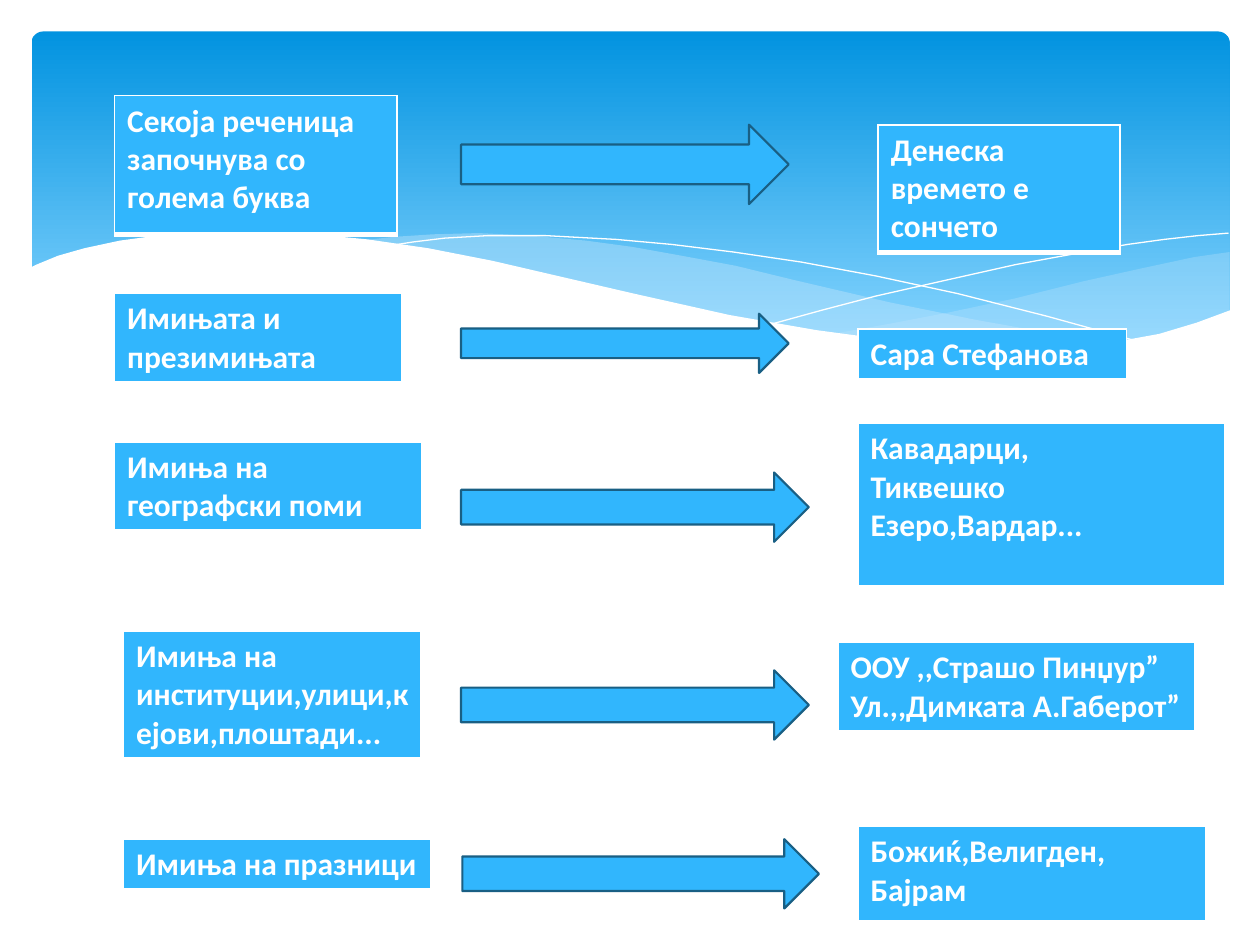
from pptx import Presentation
from pptx.dml.color import RGBColor as RGB
from pptx.enum.shapes import MSO_SHAPE as Kind
from pptx.oxml import parse_xml
from pptx.oxml.ns import nsdecls
from pptx.util import Inches, Pt

HEX = {"box": "31B6FD", "edge": "195F84", "top": "0293E0", "low": "83D3FE",
       "mist": "C6E7FC", "white": "FFFFFF"}

# Each wave: points, fill, opacity in percent
WAVES = [
    ([(9.76, 2), (9.48, 2.04), (9.06, 2.13), (8.61, 2.23), (8.05, 2.37),
      (7.53, 2.48), (7.06, 2.57), (6.61, 2.65), (6.91, 2.69), (7.32, 2.74),
      (7.69, 2.77), (8.14, 2.78), (8.54, 2.76), (8.89, 2.72), (9.21, 2.65),
      (9.49, 2.57), (9.76, 2.47)], "mist", 29),
    ([(8.93, 2.73), (8.37, 2.65), (7.75, 2.54), (7.06, 2.4), (6.29, 2.22),
      (5.84, 2.11), (5.41, 2.03), (5.02, 1.96), (4.65, 1.91), (4.2, 1.87),
      (3.8, 1.85), (3.44, 1.86), (3.13, 1.88), (2.86, 1.91), (3.23, 1.96),
      (3.62, 2.03), (4.04, 2.11), (4.49, 2.22), (5.3, 2.4), (5.84, 2.52),
      (6.34, 2.61), (6.8, 2.68), (7.22, 2.74), (7.61, 2.77), (8.07, 2.78),
      (8.48, 2.77)], "mist", 40),
    ([(3.09, 1.95), (3.28, 1.92), (3.53, 1.89), (3.87, 1.87), (4.33, 1.87),
      (4.89, 1.9), (5.33, 1.94), (5.82, 2), (6.36, 2.08), (6.95, 2.19),
      (7.6, 2.33), (8.31, 2.51), (9.07, 2.72)], None, 100),
    ([(6.13, 2.57), (6.53, 2.46), (6.95, 2.35), (7.48, 2.23), (8.06, 2.1),
      (8.66, 1.99), (8.95, 1.94), (9.24, 1.9), (9.51, 1.87), (9.75, 1.85)],
     None, 100),
    ([(9.77, 2.46), (9.5, 2.56), (9.2, 2.65), (8.87, 2.71), (8.5, 2.75),
      (8.09, 2.77), (7.61, 2.75), (7.08, 2.7), (6.48, 2.62), (5.79, 2.5),
      (5.03, 2.33), (4.47, 2.2), (3.91, 2.07), (3.4, 1.97), (2.92, 1.9),
      (2.5, 1.86), (2.11, 1.84), (1.77, 1.84), (1.32, 1.86), (0.95, 1.91),
      (0.67, 1.97), (0.46, 2.03), (0.29, 2.1), (0.23, 2.13), (0.23, 3.29),
      (9.77, 3.29)], "white", 100),
]

# Each box: left, top, width, height, paragraphs
RULES = [
    (0.91, 0.76, 2.24, 1.1, ["Секоја реченица започнува со голема буква"]),
    (0.91, 2.33, 2.28, 0.7, ["Имињата и презимињата"]),
    (0.91, 3.51, 2.44, 0.7, ["Имиња на географски поми"]),
    (0.98, 5.01, 2.36, 1, ["Имиња на институции,улици,кејови,плоштади..."]),
    (0.98, 6.66, 2.44, 0.4, ["Имиња на празници"]),
]
CASES = [
    (6.97, 0.99, 1.92, 1, ["Денеска времето е сончето"]),
    (6.81, 2.61, 2.13, 0.4, ["Сара Стефанова"]),
    (6.81, 3.36, 2.91, 1.3, ["Кавадарци,", "Тиквешко Езеро,Вардар..."]),
    (6.65, 5.1, 2.83, 0.7, ["ООУ ,,Страшо Пинџур”",
                            "Ул.,,Димката А.Габерот”"]),
    (6.81, 6.56, 2.76, 0.76, ["Божиќ,Велигден,", "Бајрам"]),
]
ARROWS = [(3.66, 0.99, 2.6, 0.63), (3.66, 2.49, 2.6, 0.47),
          (3.66, 3.75, 2.76, 0.55), (3.66, 5.32, 2.76, 0.55),
          (3.67, 6.66, 2.83, 0.55)]


def color(name):
    return RGB.from_string(HEX[name])


def paint(fill, name):
    fill.solid()
    fill.fore_color.rgb = color(name)


def add_sky(shapes):
    sky = shapes.add_shape(Kind.ROUNDED_RECTANGLE, Inches(0.25), Inches(0.25),
                           Inches(9.51), Inches(2.7))
    sky.adjustments[0] = 0.034
    sky.shadow.inherit = False
    sky.line.fill.background()
    sky.fill.gradient()
    sky.fill.gradient_angle = 270
    for stop, name, pos in zip(sky.fill.gradient_stops, ("top", "low"), (0, 0.9)):
        stop.color.rgb = color(name)
        stop.position = pos


def add_wave(shapes, points, name, alpha):
    """Draw a filled wave, or an open white line when there is no fill."""
    spots = [(Inches(x), Inches(y)) for x, y in points]
    pen = shapes.build_freeform(*spots[0])
    pen.add_line_segments(spots[1:], close=name is not None)
    wave = pen.convert_to_shape()
    wave.shadow.inherit = False
    if name is None:
        wave.fill.background()
        paint(wave.line.fill, "white")
        wave.line.width = Pt(0)
        return
    wave.line.fill.background()
    paint(wave.fill, name)
    if alpha < 100:
        tint = wave.fill._xPr.solidFill[0]
        tint.append(parse_xml(f'<a:alpha {nsdecls("a")} val="{alpha * 1000}"/>'))


def add_arrow(shapes, *area):
    arrow = shapes.add_shape(Kind.RIGHT_ARROW, *map(Inches, area))
    arrow.shadow.inherit = False
    paint(arrow.fill, "box")
    paint(arrow.line.fill, "edge")
    arrow.line.width = Pt(1.25)


def add_edges(cell):
    for side, width in zip("LRTB", (1, 1, 1, 3)):
        cell._tc.get_or_add_tcPr().append(parse_xml(
            f'<a:ln{side} {nsdecls("a")} w="{Pt(width)}"><a:solidFill>'
            f'<a:srgbClr val="{HEX["white"]}"/></a:solidFill></a:ln{side}>'))


def add_box(shapes, left, top, width, height, lines):
    """Draw a one-cell table."""
    area = map(Inches, (left, top, width, height))
    cell = shapes.add_table(1, 1, *area).table.cell(0, 0)
    add_edges(cell)
    paint(cell.fill, "box")
    frame = cell.text_frame
    for i, line in enumerate(lines):
        para = frame.add_paragraph() if i else frame.paragraphs[0]
        run = para.add_run()
        run.text = line
        run.font.name = "Calibri"
        run.font.size = Pt(18)
        run.font.bold = True
        run.font.color.rgb = color("white")


def main():
    deck = Presentation()
    deck.slide_width, deck.slide_height = Inches(10), Inches(7.5)
    slide = deck.slides.add_slide(deck.slide_layouts[6])
    paint(slide.background.fill, "white")
    shapes = slide.shapes
    add_sky(shapes)
    for wave in WAVES:
        add_wave(shapes, *wave)
    for box in RULES:
        add_box(shapes, *box)
    for area in ARROWS:
        add_arrow(shapes, *area)
    for box in CASES:
        add_box(shapes, *box)
    deck.save("out.pptx")


if __name__ == "__main__":
    main()
